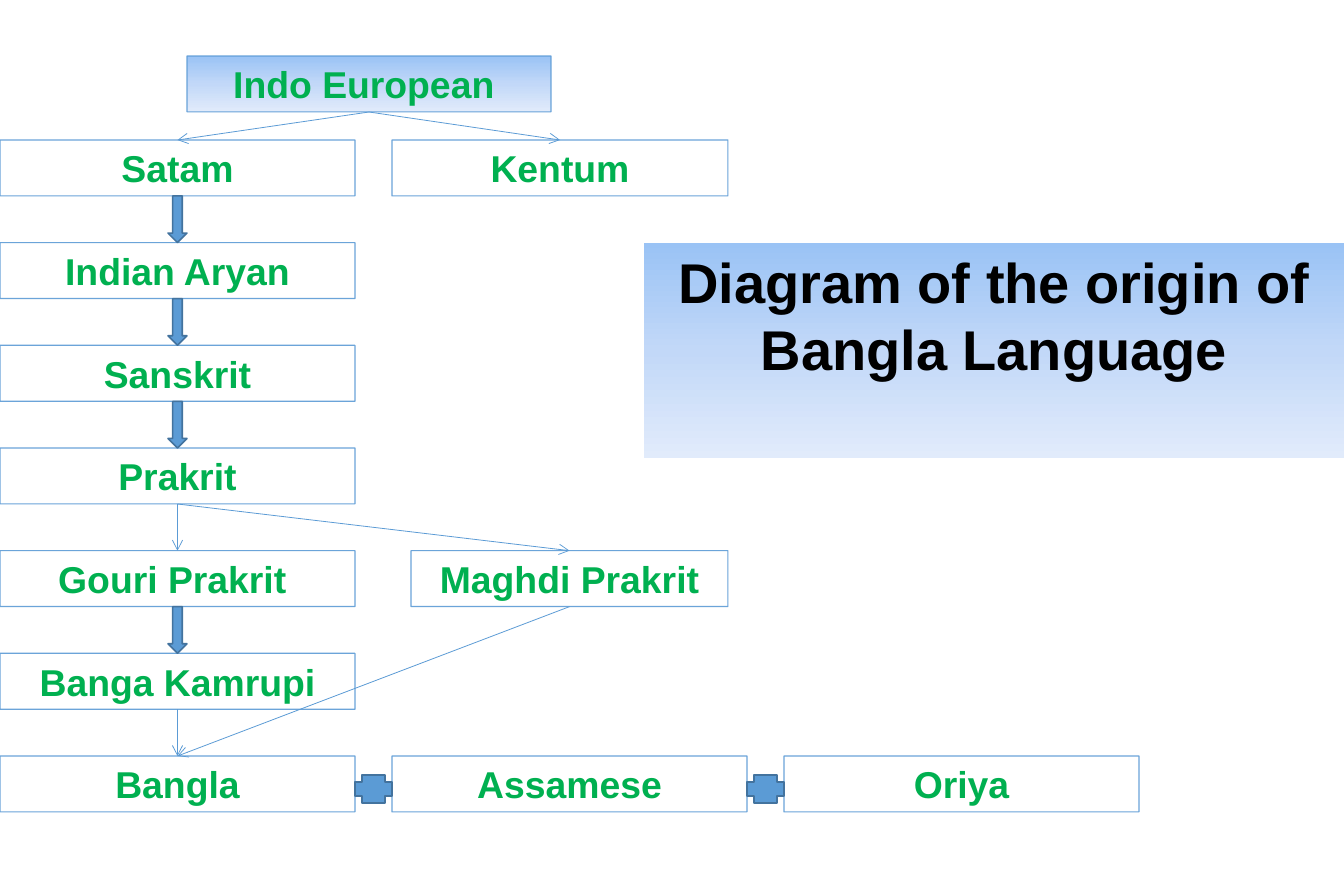
from copy import deepcopy

from lxml.etree import SubElement
from pptx import Presentation
from pptx.dml.color import RGBColor
from pptx.enum.shapes import MSO_CONNECTOR, MSO_SHAPE
from pptx.enum.text import MSO_ANCHOR, PP_ALIGN
from pptx.oxml.ns import qn
from pptx.util import Inches, Pt

COLORS = {
    "text": "00B050",
    "title": "000000",
    "accent": "5B9BD5",
    "accent_edge": "43739E",
}
GRADIENT = [(0, "9AC3F5"), (0.5, "C2D8F8"), (1, "E1EBFB")]

FIRST_ROW = 1.25
ROW_STEP = 5.5 / 6
BOX_WIDTH = 3.17
BOX_HEIGHT = 0.5
ROW_GAP = ROW_STEP - BOX_HEIGHT
LANGUAGE_STEP = 3.5
ARROW_WIDTH = 0.17
LINEAGE = [
    "Satam",
    "Indian Aryan",
    "Sanskrit",
    "Prakrit",
    "Gouri Prakrit ",
    "Banga Kamrupi",
    "Bangla",
]
BLOCK_ARROW_ROWS = [0, 1, 2, 4]


def row_top(row):
    """Return the top of a diagram row in inches."""
    return FIRST_ROW + row * ROW_STEP


def add_preset(slide, preset, left, top, width, height):
    """Add a preset shape without a shadow."""
    shape = slide.shapes.add_shape(
        preset, Inches(left), Inches(top), Inches(width), Inches(height)
    )
    shape.shadow.inherit = False
    return shape


def fill_gradient(shape):
    """Fill a shape from top to bottom with the three gradient colours."""
    shape.fill.gradient()
    shape.fill.gradient_angle = 270
    stop_list = shape.element.spPr.find(".//" + qn("a:gsLst"))
    stop_list.insert(1, deepcopy(stop_list[0]))
    for stop, (position, color) in zip(shape.fill.gradient_stops, GRADIENT):
        stop.position = position
        stop.color.rgb = RGBColor.from_string(color)


def write_text(shape, text, size, color, anchor, side, edge):
    """Write one bold centred run with the given margins."""
    frame = shape.text_frame
    frame.word_wrap = True
    frame.vertical_anchor = anchor
    frame.margin_left = frame.margin_right = Inches(side)
    frame.margin_top = frame.margin_bottom = Inches(edge)
    paragraph = frame.paragraphs[0]
    paragraph.alignment = PP_ALIGN.CENTER
    run = paragraph.add_run()
    run.text = text
    run.font.name = "Arial"
    run.font.size = Pt(size)
    run.font.bold = True
    run.font.color.rgb = RGBColor.from_string(color)


def add_title(slide, text):
    """Add the gradient title panel."""
    panel = add_preset(slide, MSO_SHAPE.RECTANGLE, 5.75, row_top(1), 6.25, 1.92)
    fill_gradient(panel)
    panel.line.fill.background()
    write_text(panel, text, 36, COLORS["title"], MSO_ANCHOR.TOP, 0.08, 0.04)


def add_box(slide, text, left, top, width=BOX_WIDTH):
    """Add an outlined language box."""
    box = add_preset(slide, MSO_SHAPE.RECTANGLE, left, top, width, BOX_HEIGHT)
    box.fill.background()
    box.line.width = Pt(0.75)
    box.line.color.rgb = RGBColor.from_string(COLORS["accent"])
    line_color = box.line._ln.find(".//" + qn("a:srgbClr"))
    SubElement(line_color, qn("a:alpha"), val="90000")
    write_text(box, text, 24, COLORS["text"], MSO_ANCHOR.MIDDLE, 0.11, 0.06)
    return box


def add_symbol(slide, preset, left, top, width, height):
    """Add a solid arrow or plus sign."""
    symbol = add_preset(slide, preset, left, top, width, height)
    symbol.fill.solid()
    symbol.fill.fore_color.rgb = RGBColor.from_string(COLORS["accent"])
    symbol.line.width = Pt(1)
    symbol.line.color.rgb = RGBColor.from_string(COLORS["accent_edge"])


def add_branch(slide, parent, child):
    """Link the bottom of one box to the top of another with a thin arrow."""
    branch = slide.shapes.add_connector(MSO_CONNECTOR.STRAIGHT, 0, 0, 0, 0)
    branch.begin_connect(parent, 2)
    branch.end_connect(child, 0)
    branch.line.width = Pt(0.5)
    branch.line.color.rgb = RGBColor.from_string(COLORS["accent"])
    SubElement(branch.line._ln, qn("a:tailEnd"), type="arrow")
    SubElement(branch.element.spPr, qn("a:effectLst"))


def main():
    """Build the language origin slide."""
    presentation = Presentation()
    presentation.slide_width = Inches(12)
    presentation.slide_height = Inches(8)
    slide = presentation.slides.add_slide(presentation.slide_layouts[6])

    add_title(slide, "Diagram of the origin of Bangla Language")
    root = add_box(slide, "Indo European ", 1.67, 0.5, 3.25)
    fill_gradient(root)
    lineage = [
        add_box(slide, name, 0, row_top(row)) for row, name in enumerate(LINEAGE)
    ]
    satam, _, _, prakrit, gouri, kamrupi, bangla = lineage
    kentum = add_box(slide, "Kentum", 3.5, row_top(0), 3)
    maghdi = add_box(slide, "Maghdi Prakrit", 3.67, row_top(4), 2.83)

    for row in BLOCK_ARROW_ROWS:
        add_symbol(
            slide,
            MSO_SHAPE.DOWN_ARROW,
            (BOX_WIDTH - ARROW_WIDTH) / 2,
            row_top(row) + BOX_HEIGHT,
            ARROW_WIDTH,
            ROW_GAP,
        )
    for column, name in enumerate(["Assamese", "Oriya"], start=1):
        left = column * LANGUAGE_STEP
        gap = LANGUAGE_STEP - BOX_WIDTH
        add_box(slide, name, left, row_top(6))
        add_symbol(slide, MSO_SHAPE.CROSS, left - gap, 6.92, gap, 0.25)

    for parent, child in [
        (root, kentum),
        (root, satam),
        (prakrit, gouri),
        (prakrit, maghdi),
        (maghdi, bangla),
        (kamrupi, bangla),
    ]:
        add_branch(slide, parent, child)

    presentation.save("out.pptx")


if __name__ == "__main__":
    main()
